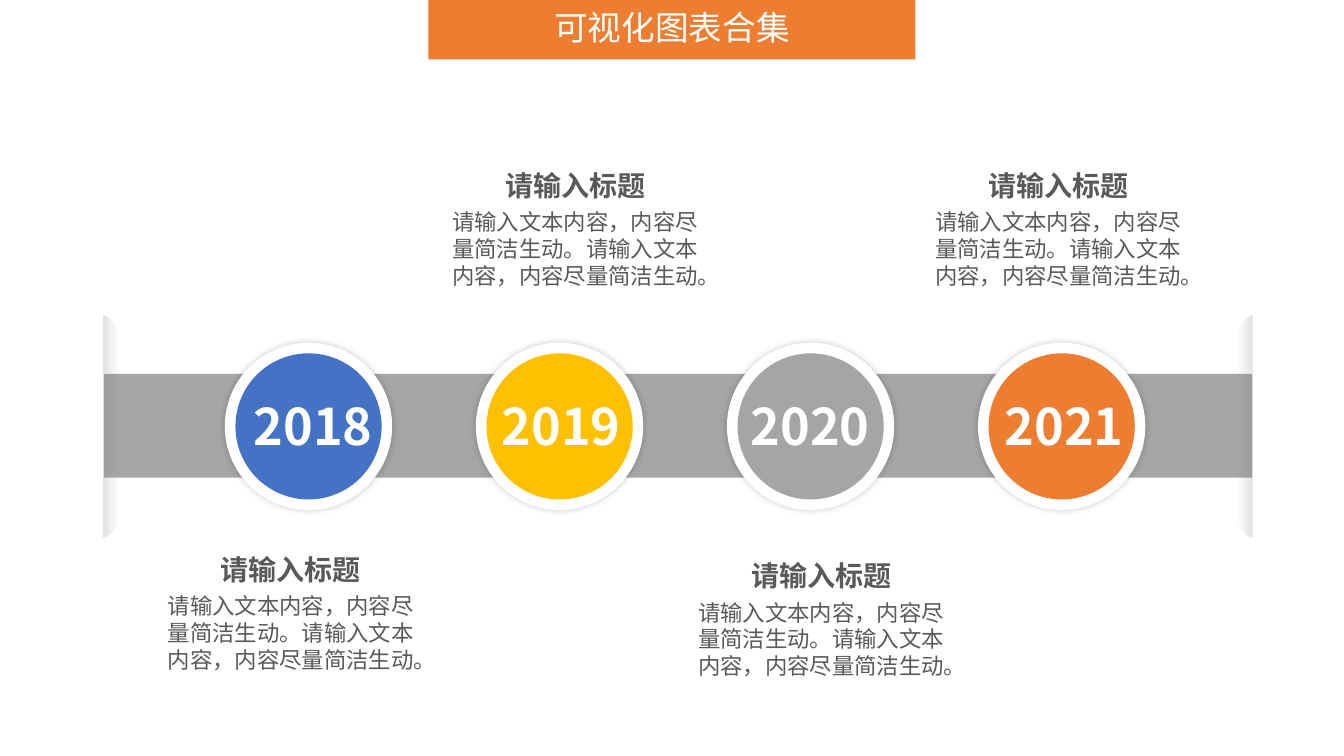
from lxml import etree
from pptx import Presentation
from pptx import util as u
from pptx.dml.color import RGBColor
from pptx.enum import shapes, text
from pptx.oxml.ns import qn

HEADER = "可视化图表合集"
TITLE = "请输入标题"
BODY = "请输入文本内容，内容尽量简洁生动。请输入文本内容，内容尽量简洁生动。"
COLORS = {"white": "FFFFFF", "band": "A6A6A6", "text": "595959", "shade": "808080",
          "blue": "4472C4", "gold": "FFC000", "grey": "A5A5A5", "orange": "ED7D31"}
# year, colour, left of year label, left and top of title
MILESTONES = [
    ("2018", "blue", 2.31, 2.09, 5.43),
    ("2019", "gold", 4.77, 4.91, 1.62),
    ("2020", "grey", 7.24, 7.35, 5.49),
    ("2021", "orange", 9.76, 9.7, 1.62),
]
CJK, LATIN = "Noto Sans CJK SC", "Arial"
BAND_LEFT, BAND_WIDTH, CENTER_Y = 1.03, 11.39, 4.23
FIRST_X, STEP = 3.06, 2.49
RING, DISC = 1.66, 1.45

prs = Presentation()
prs.slide_width, prs.slide_height = u.Inches(13.33), u.Inches(7.5)
s = prs.slides.add_slide(prs.slide_layouts[6])


def add_solid(kind, x, y, w, h, color):
    sp = s.shapes.add_shape(kind, *map(u.Inches, (x, y, w, h)))
    sp.shadow.inherit = False
    sp.fill.solid()
    sp.fill.fore_color.rgb = RGBColor.from_string(COLORS[color])
    sp.line.fill.background()
    return sp


def add_circle(x, size, color):
    return add_solid(shapes.MSO_SHAPE.OVAL, x - size / 2, CENTER_Y - size / 2, size, size, color)


def add_color(parent, color, alpha):
    clr = etree.SubElement(parent, qn("a:srgbClr"), val=COLORS.get(color, color))
    etree.SubElement(clr, qn("a:alpha"), val=str(alpha * 1000))


def add_glow_shadow(sp):
    effects = sp._element.spPr.find(qn("a:effectLst"))
    shadow = etree.SubElement(effects, qn("a:outerShdw"), blurRad=str(u.Pt(5)), dist="0",
                              dir="0", algn="ctr", rotWithShape="0")
    add_color(shadow, "000000", 20)


def add_text(x, y, w, h, words, size, color, font=CJK, bold=False, pitch=None):
    tf = s.shapes.add_textbox(*map(u.Inches, (x, y, w, h))).text_frame
    tf.word_wrap = True
    p = tf.paragraphs[0]
    p.alignment = text.PP_ALIGN.CENTER
    if pitch:
        p.line_spacing = u.Pt(pitch)
    r = p.add_run()
    r.text = words
    r.font.size, r.font.bold, r.font.name = u.Pt(size), bold, font
    r.font.color.rgb = RGBColor.from_string(COLORS[color])
    etree.SubElement(r._r.get_or_add_rPr(), qn("a:ea"), typeface=font)


def bezier(p0, p1, p2, p3, steps=12):
    for i in range(1, steps + 1):
        t = i / steps
        yield tuple((1 - t) ** 3 * a + 3 * t * (1 - t) ** 2 * b + 3 * t * t * (1 - t) * c + t ** 3 * d
                    for a, b, c, d in zip(p0, p1, p2, p3))


def add_end_shade(edge, inward, angle):
    """Rounded shade on a band end; inward is 1 or -1, the side it bulges to."""
    outline = [(0, 1.1), (0, -1.1), (0.05, -1.08)]
    outline += bezier((0.05, -1.08), (0.19, -0.98), (0.3, -0.54), (0.3, 0))
    outline += bezier((0.3, 0), (0.3, 0.53), (0.19, 0.97), (0.05, 1.08))
    points = [(u.Inches(edge + inward * x), u.Inches(CENTER_Y + y)) for x, y in outline]
    builder = s.shapes.build_freeform(*points[0])
    builder.add_line_segments(points[1:], close=True)
    sp = builder.convert_to_shape()
    sp.shadow.inherit = False
    sp.line.fill.background()
    sp.fill.gradient()
    sp.fill.gradient_angle = 0
    grad = sp._element.spPr.find(qn("a:gradFill"))
    grad.find(qn("a:lin")).set("ang", str(angle * 60000))
    stops = grad.find(qn("a:gsLst"))
    for stop in list(stops):
        stops.remove(stop)
    for pos, alpha in ((0, 0), (50, 0), (100, 23)):
        add_color(etree.SubElement(stops, qn("a:gs"), pos=str(pos * 1000)), "shade", alpha)


add_solid(shapes.MSO_SHAPE.RECTANGLE, 4.25, -0.03, 4.83, 0.62, "orange")
add_text(4.58, 0.02, 4.17, 0.5, HEADER, 24, "white")
add_solid(shapes.MSO_SHAPE.RECTANGLE, BAND_LEFT, 3.71, BAND_WIDTH, 1.03, "band")
add_end_shade(BAND_LEFT + BAND_WIDTH, -1, 0)
add_end_shade(BAND_LEFT, 1, 180)

for i, (year, color, year_x, title_x, title_y) in enumerate(MILESTONES):
    x = FIRST_X + i * STEP
    add_glow_shadow(add_circle(x, RING, "white"))
    add_circle(x, DISC, color)
    add_text(year_x, 3.87, 1.59, 0.71, year, 36, "white", bold=True)
    add_text(title_x, title_y, 1.59, 0.44, TITLE, 20, "text", bold=True)
    add_text(title_x - 0.57, title_y + 0.4, 2.73, 1.21, BODY, 16, "text", font=LATIN, pitch=19.2)

prs.save("out.pptx")
